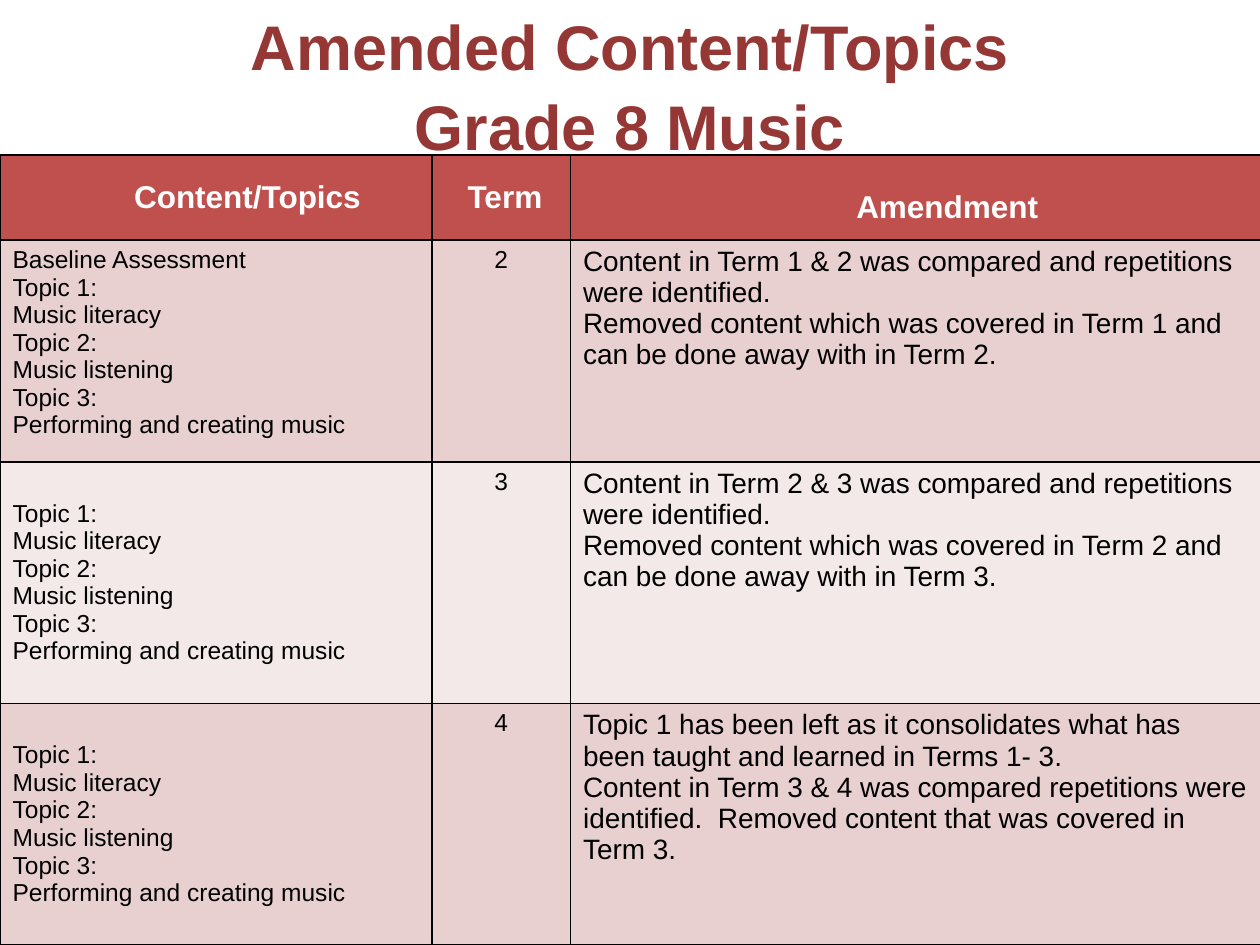
from pptx import Presentation
from pptx.dml.color import RGBColor as Rgb
from pptx.enum.text import MSO_ANCHOR as Anchor, PP_ALIGN as Align
from pptx.oxml import parse_xml
from pptx.oxml.ns import nsdecls
from pptx.util import Cm, Pt

TITLE = "Amended Content/Topics\vGrade 8 Music"
HEADS = [("Content/Topics", 1.27, 0), ("Term", 0.15, 0), ("Amendment", 1.27, 0.4)]
TOPICS = ["Topic 1:", "Music literacy", "Topic 2:", "Music listening",
          "Topic 3:", "Performing and creating music"]
ROWS = [
    (["Baseline Assessment"] + TOPICS, "2", [
        "Content in Term 1 & 2 was compared and repetitions were identified.",
        "Removed content which was covered in Term 1 and can be done away with in Term 2."]),
    (TOPICS, "3", [
        "Content in Term 2 & 3 was compared and repetitions were identified.",
        "Removed content which was covered in Term 2 and can be done away with in Term 3."]),
    (TOPICS, "4", [
        "Topic 1 has been left as it consolidates what has been taught and learned in Terms 1- 3.",
        "Content in Term 3 & 4 was compared repetitions were identified.  "
        "Removed content that was covered in Term 3."]),
]
WIDTHS = [8.71, 2.79, 13.92]
HEIGHTS = [1.72, 4.47, 4.87, 4.87]
BANDS = ["E8D0D0", "F4E9E9"]


def color(code):
    return Rgb.from_string(code)


def write(frame, lines, size=14, ink="000000", bold=False, align=Align.LEFT,
          indent=0, space=None):
    for i, line in enumerate(lines):
        para = frame.add_paragraph() if i else frame.paragraphs[0]
        para.text = line
        para.alignment = align
        para.line_spacing = space
        if indent:
            para._p.get_or_add_pPr().set("marL", str(Cm(indent)))
        for run in para.runs:
            font = run.font
            font.name, font.size, font.bold = "Arial", Pt(size), bold
            font.color.rgb = color(ink)


def paint(cell, fill):
    props = cell._tc.get_or_add_tcPr()
    for side in "LRTB":
        props.append(parse_xml(
            f'<a:ln{side} {nsdecls("a")} w="{Pt(1)}"><a:solidFill>'
            f'<a:srgbClr val="000000"/></a:solidFill></a:ln{side}>'))
    cell.fill.solid()
    cell.fill.fore_color.rgb = color(fill)


deck = Presentation()
deck.slide_width, deck.slide_height = Cm(25.4), Cm(19.05)
slide = deck.slides.add_slide(deck.slide_layouts[6])

box = slide.shapes.add_textbox(Cm(1.27), Cm(0.38), Cm(22.86), Cm(2.6))
box.text_frame.word_wrap = True
box.text_frame.vertical_anchor = Anchor.MIDDLE
write(box.text_frame, [TITLE], size=36, ink="953735", bold=True,
      align=Align.CENTER, space=1.05)

table = slide.shapes.add_table(
    len(HEIGHTS), len(WIDTHS), Cm(0), Cm(3.12), Cm(sum(WIDTHS)), Cm(sum(HEIGHTS))).table
for col, width in zip(table.columns, WIDTHS):
    col.width = Cm(width)
for row, height in zip(table.rows, HEIGHTS):
    row.height = Cm(height)

for c, (head, indent, top) in enumerate(HEADS):
    cell = table.cell(0, c)
    paint(cell, "C0504D")
    cell.vertical_anchor = Anchor.MIDDLE
    cell.margin_left = cell.margin_right = Cm(0.18)
    cell.margin_top, cell.margin_bottom = Cm(top), Cm(0)
    write(cell.text_frame, [head], size=18, ink="FFFFFF", bold=True,
          align=Align.CENTER, indent=indent)

for r, (topics, term, notes) in enumerate(ROWS, 1):
    cells = [table.cell(r, c) for c in range(len(WIDTHS))]
    for cell in cells:
        paint(cell, BANDS[(r - 1) % 2])
    if r > 1:
        cells[0].vertical_anchor = Anchor.MIDDLE
    write(cells[0].text_frame, topics)
    write(cells[1].text_frame, [term], align=Align.CENTER)
    write(cells[2].text_frame, notes, size=16)

deck.save("out.pptx")
